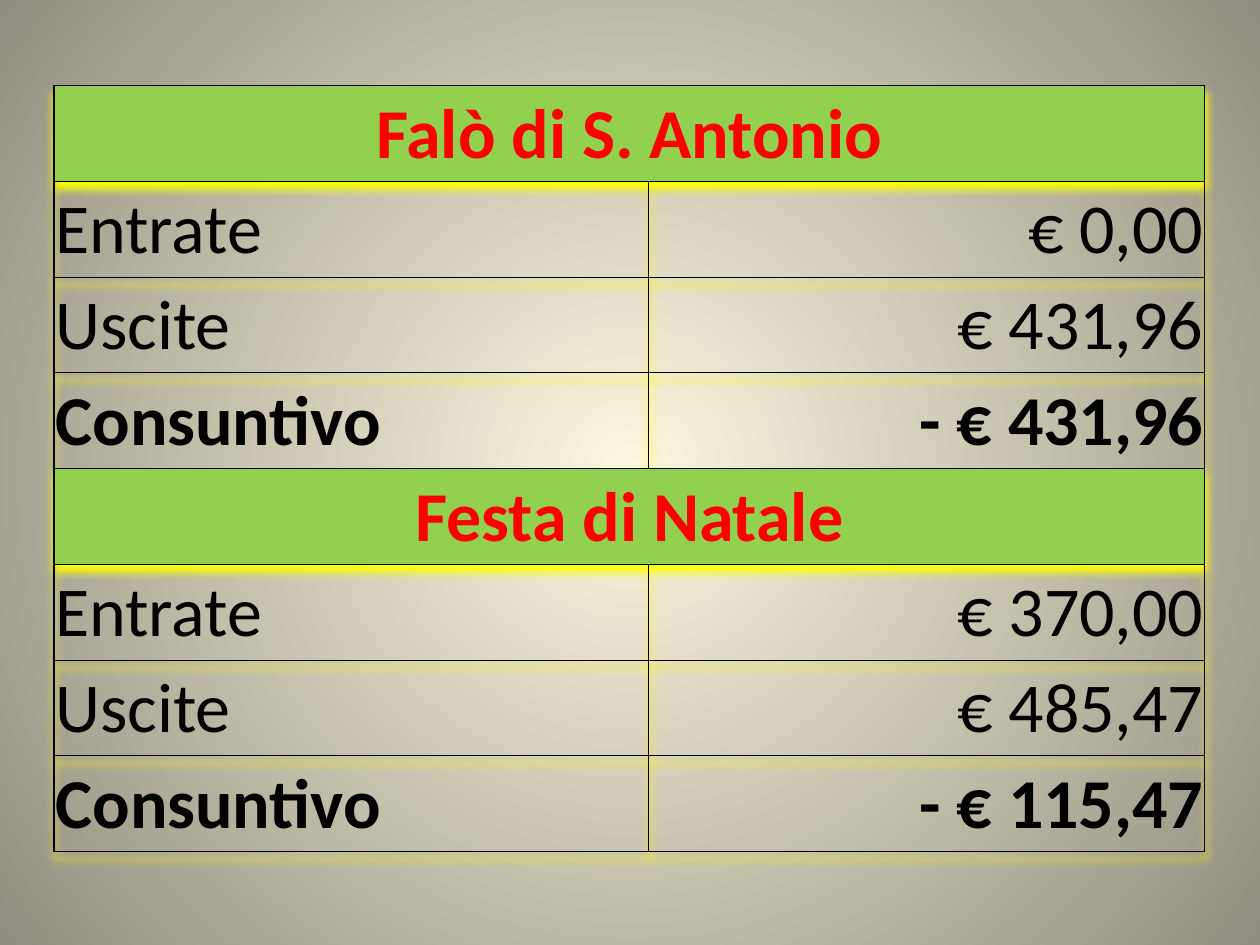
import pptx
import pptx.dml.color
import pptx.enum.text
import pptx.oxml
import pptx.oxml.ns
import pptx.util

Inches = pptx.util.Inches
Pt = pptx.util.Pt
RGBColor = pptx.dml.color.RGBColor
Align = pptx.enum.text.PP_ALIGN

CREAM = RGBColor(0xFC, 0xF7, 0xDD)
TAUPE = RGBColor(0x91, 0x8E, 0x81)
GREEN = RGBColor(0x92, 0xD0, 0x50)
RED = RGBColor(0xFF, 0x00, 0x00)
BLACK = RGBColor(0x00, 0x00, 0x00)
YELLOW = RGBColor(0xFF, 0xFF, 0x00)

PLAIN_TABLE = "{2D5ABB26-0587-4C30-8999-92F81FD0307C}"
COLUMN_WIDTHS = (4.72, 4.41)
ROW_HEIGHT = 0.76

EVENTS = {
    "Falò di S. Antonio": (
        ("Entrate", "€ 0,00"),
        ("Uscite", "€ 431,96"),
        ("Consuntivo", "- € 431,96"),
    ),
    "Festa di Natale": (
        ("Entrate", "€ 370,00"),
        ("Uscite", "€ 485,47"),
        ("Consuntivo", "- € 115,47"),
    ),
}


def drawing_xml(markup):
    """Parse one element, declaring the a: namespace on its root tag."""
    tag, rest = markup.split(" ", 1)
    return pptx.oxml.parse_xml(f"{tag} {pptx.oxml.ns.nsdecls('a')} {rest}")


class BalanceSlide:
    font = "Calibri"
    size = Pt(40)

    def __init__(self, presentation):
        self.slide = presentation.slides.add_slide(presentation.slide_layouts[6])

    def radial_background(self, center, edge):
        fill = self.slide.background.fill
        fill.gradient()
        for stop, position, color in zip(fill.gradient_stops, (0, 1), (center, edge)):
            stop.position = position
            stop.color.rgb = color
        linear = next(self.slide.element.iter(pptx.oxml.ns.qn("a:lin")))
        linear.getparent().replace(linear, drawing_xml(
            '<a:path path="circle"><a:fillToRect l="50000" t="50000" '
            'r="50000" b="50000"/></a:path>'))

    def table(self, left, top, row_count):
        frame = self.slide.shapes.add_table(
            row_count, len(COLUMN_WIDTHS), Inches(left), Inches(top),
            Inches(sum(COLUMN_WIDTHS)), Inches(ROW_HEIGHT * row_count))
        table = frame.table
        for column, width in zip(table.columns, COLUMN_WIDTHS):
            column.width = Inches(width)
        for row in table.rows:
            row.height = Inches(ROW_HEIGHT)
        table.first_row = table.horz_banding = False
        properties = frame._element.graphic.graphicData.tbl.tblPr
        properties.find(pptx.oxml.ns.qn("a:tableStyleId")).text = PLAIN_TABLE
        properties.insert(0, drawing_xml(
            f'<a:effectLst ><a:outerShdw blurRad="{Inches(0.06)}" '
            f'dist="{Inches(0.06)}" dir="5400000" algn="t" rotWithShape="0">'
            f'<a:srgbClr val="{YELLOW}"/></a:outerShdw></a:effectLst>'))
        return table

    def borders(self, cell, widths):
        properties = cell._tc.get_or_add_tcPr()
        for side, width in widths.items():
            properties.append(drawing_xml(
                f'<a:ln{side} w="{Pt(width)}"><a:solidFill>'
                f'<a:srgbClr val="{BLACK}"/></a:solidFill></a:ln{side}>'))

    def cell(self, table, row, column, text="", align=Align.LEFT,
             color=BLACK, bold=False, fill=None):
        cell = table.cell(row, column)
        self.borders(cell, {
            "L": 1 if column == 0 else 0.5, "R": 0.5,
            "T": 1 if row == 0 else 0.5, "B": 0.5})
        if fill is None:
            cell.fill.background()
        else:
            cell.fill.solid()
            cell.fill.fore_color.rgb = fill
        layout = {
            "margin_left": Inches(0.01), "margin_right": Inches(0.01),
            "margin_top": Inches(0.01), "margin_bottom": 0,
            "vertical_anchor": pptx.enum.text.MSO_ANCHOR.MIDDLE}
        for name, value in layout.items():
            setattr(cell, name, value)
        if not text:
            return
        paragraph = cell.text_frame.paragraphs[0]
        paragraph.alignment = align
        run = paragraph.add_run()
        run.text = text
        for name, value in {"name": self.font, "size": self.size, "bold": bold}.items():
            setattr(run.font, name, value)
        run.font.color.rgb = color

    def heading(self, table, row, text):
        self.cell(table, row, 0, text, Align.CENTER, RED, True, GREEN)
        self.cell(table, row, 1, fill=GREEN)
        table.cell(row, 0).merge(table.cell(row, 1))

    def entry(self, table, row, label, amount):
        bold = label == "Consuntivo"
        self.cell(table, row, 0, label, bold=bold)
        self.cell(table, row, 1, amount, Align.RIGHT, bold=bold)


def main():
    presentation = pptx.Presentation()
    presentation.slide_width = Inches(10)
    presentation.slide_height = Inches(7.5)
    balance = BalanceSlide(presentation)
    balance.radial_background(CREAM, TAUPE)
    accounts = balance.table(0.43, 0.68, sum(1 + len(e) for e in EVENTS.values()))
    row = 0
    for event, entries in EVENTS.items():
        balance.heading(accounts, row, event)
        for row, (label, amount) in enumerate(entries, row + 1):
            balance.entry(accounts, row, label, amount)
        row += 1
    presentation.save("out.pptx")


if __name__ == "__main__":
    main()
